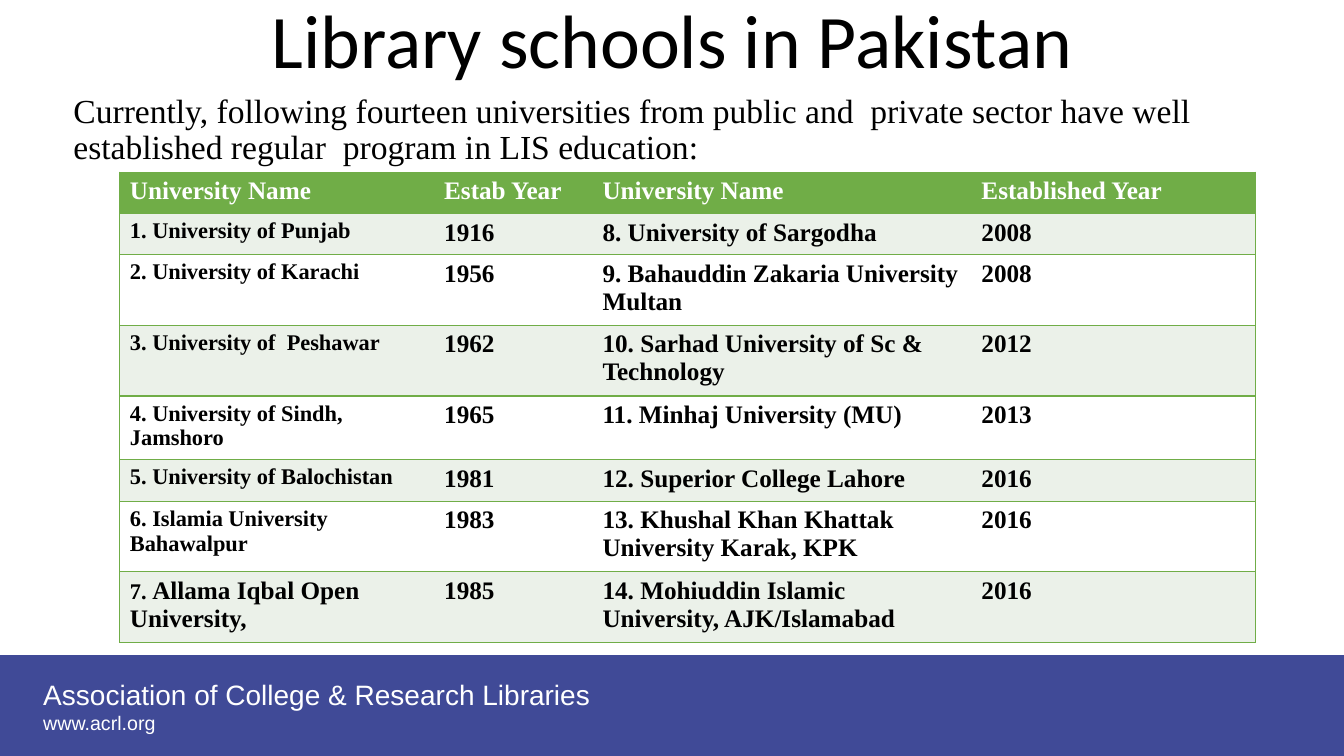
from dataclasses import dataclass

from lxml import etree
from pptx import Presentation
from pptx.dml.color import RGBColor
from pptx.enum import shapes, text
from pptx.oxml import ns
from pptx.util import Cm, Pt


@dataclass(frozen=True)
class Theme:
    black: str = "000000"
    white: str = "FFFFFF"
    green: str = "70AD47"
    pale_green: str = "EBF1E9"
    footer_blue: str = "404A97"
    title_font: str = "Calibri"
    body_font: str = "Times New Roman"
    footer_font: str = "Arial"
    title_size: int = 54
    intro_size: int = 24
    association_size: int = 20
    table_size: int = 18
    small_size: int = 16
    address_size: int = 14


THEME = Theme()

INTRO = ("Currently, following fourteen universities from public and  private sector "
         "have well established regular  program in LIS education:")
HEADINGS = ("University Name", "Estab Year", "University Name", "Established Year")
SCHOOLS = [
    ("1. University of Punjab", "1916", "8. University of Sargodha", "2008"),
    ("2. University of Karachi", "1956", "9. Bahauddin Zakaria University Multan", "2008"),
    ("3. University of  Peshawar", "1962", "10. Sarhad University of Sc & Technology", "2012"),
    ("4. University of Sindh, Jamshoro", "1965", "11. Minhaj University (MU)", "2013"),
    ("5. University of Balochistan", "1981", "12. Superior College Lahore", "2016"),
    ("6. Islamia University Bahawalpur", "1983",
     "13. Khushal Khan Khattak University Karak, KPK", "2016"),
    ("7. Allama Iqbal Open University,", "1985",
     "14. Mohiuddin Islamic University, AJK/Islamabad", "2016"),
]
COLUMN_WIDTHS = (7.92, 3.99, 9.55, 7.16)
ROW_HEIGHT = 1.04


def add_span(para, words, font, size, colour, bold=False):
    span = para.add_run()
    span.text = words
    span.font.name = font
    span.font.size = Pt(size)
    span.font.bold = bold
    span.font.color.rgb = RGBColor.from_string(colour)


def add_text(page, left, top, width, height, lines, font, colour,
             align=text.PP_ALIGN.LEFT, anchor=text.MSO_ANCHOR.TOP, spacing=1.0):
    """Add a text box; lines holds one (words, size) pair per paragraph."""
    box = page.shapes.add_textbox(Cm(left), Cm(top), Cm(width), Cm(height))
    frame = box.text_frame
    frame.word_wrap = True
    frame.vertical_anchor = anchor
    for number, (words, size) in enumerate(lines):
        para = frame.add_paragraph() if number else frame.paragraphs[0]
        para.alignment = align
        para.line_spacing = spacing
        add_span(para, words, font, size, colour)


def add_band(page, left, top, width, height, colour):
    band = page.shapes.add_shape(shapes.MSO_SHAPE.RECTANGLE,
                                 Cm(left), Cm(top), Cm(width), Cm(height))
    band.shadow.inherit = False
    band.fill.solid()
    band.fill.fore_color.rgb = RGBColor.from_string(colour)
    band.line.fill.background()


def set_borders(cell, colours):
    """Draw the left, right, top and bottom borders; None leaves a side bare."""
    properties = cell._tc.get_or_add_tcPr()
    for place, (side, colour) in enumerate(zip("LRTB", colours)):
        line = etree.Element(ns.qn(f"a:ln{side}"), w=str(Pt(1)))
        if colour:
            fill = etree.SubElement(line, ns.qn("a:solidFill"))
            etree.SubElement(fill, ns.qn("a:srgbClr"), val=colour)
        else:
            etree.SubElement(line, ns.qn("a:noFill"))
        properties.insert(place, line)


def cell_spans(words, row, column):
    """Split a cell's words into (words, size) pairs."""
    if row == 0 or column > 0:
        return [(words, THEME.table_size)]
    if row == len(SCHOOLS):
        number, name = words.split(" ", 1)
        return [(number + " ", THEME.small_size), (name, THEME.table_size)]
    return [(words, THEME.small_size)]


def add_school_table(page, left, top):
    rows = [HEADINGS, *SCHOOLS]
    last_column = len(COLUMN_WIDTHS) - 1
    table = page.shapes.add_table(len(rows), len(COLUMN_WIDTHS), Cm(left), Cm(top),
                                  Cm(sum(COLUMN_WIDTHS)), Cm(ROW_HEIGHT * len(rows))).table
    table.horz_banding = False
    for column, width in zip(table.columns, COLUMN_WIDTHS):
        column.width = Cm(width)

    for row, entries in enumerate(rows):
        table.rows[row].height = Cm(ROW_HEIGHT)
        band = THEME.pale_green if row % 2 else THEME.white
        fill = band if row else THEME.green
        ink = THEME.black if row else THEME.white
        for column, words in enumerate(entries):
            cell = table.cell(row, column)
            cell.fill.solid()
            cell.fill.fore_color.rgb = RGBColor.from_string(fill)
            set_borders(cell, (THEME.green if column == 0 else None,
                               THEME.green if column == last_column else None,
                               THEME.green, THEME.green))
            para = cell.text_frame.paragraphs[0]
            for part, size in cell_spans(words, row, column):
                add_span(para, part, THEME.body_font, size, ink, bold=True)


def main():
    deck = Presentation()
    deck.slide_width, deck.slide_height = Cm(33.87), Cm(19.05)
    page = deck.slides.add_slide(deck.slide_layouts[6])

    # Footer
    add_band(page, 0, 16.51, 33.87, 2.54, THEME.footer_blue)
    add_text(page, 0.84, 16.94, 25.12, 1.7,
             [("Association of College & Research Libraries", THEME.association_size),
              ("www.acrl.org", THEME.address_size)],
             THEME.footer_font, THEME.white)

    # Title and introduction
    add_text(page, 4.24, 0.51, 25.4, 1.75,
             [("Library schools in Pakistan", THEME.title_size)],
             THEME.title_font, THEME.black, align=text.PP_ALIGN.CENTER,
             anchor=text.MSO_ANCHOR.BOTTOM, spacing=0.9)
    add_text(page, 1.6, 2.26, 30.45, 2.08, [(INTRO, THEME.intro_size)],
             THEME.body_font, THEME.black, spacing=0.9)

    # Universities and the years they were established
    add_school_table(page, 3.02, 4.34)

    deck.save("out.pptx")


if __name__ == "__main__":
    main()
